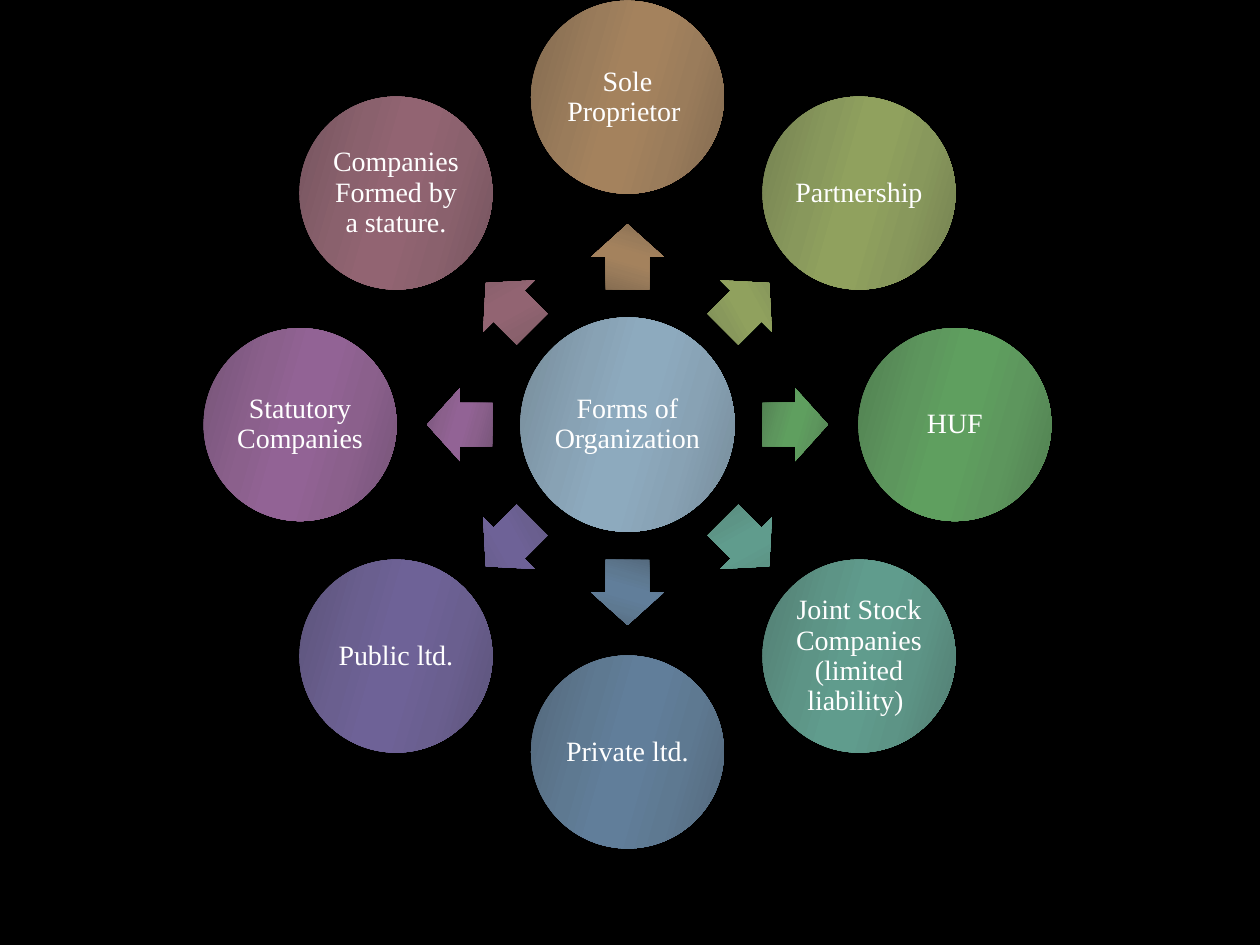
"""Build a radial slide of the forms of organization."""
from dataclasses import dataclass
from math import cos, radians, sin

from lxml.etree import SubElement
from pptx import Presentation
from pptx.dml.color import RGBColor
from pptx.enum.shapes import MSO_SHAPE
from pptx.enum.text import MSO_ANCHOR, PP_ALIGN
from pptx.oxml.ns import qn
from pptx.shapes.autoshape import Shape
from pptx.slide import Slide
from pptx.util import Cm, Pt

CENTER_X, CENTER_Y = 12.65, 8.56
HUB_SIZE, CIRCLE_SIZE = 4.32, 3.89
ARROW_LENGTH, ARROW_WIDTH = 1.32, 1.47
CIRCLE_ORBIT, ARROW_ORBIT = 6.6, 3.38
GRADIENT_ANGLE = 16
INSET = Cm(0.05)
FRAME_FORMAT = {
    "word_wrap": True, "vertical_anchor": MSO_ANCHOR.MIDDLE,
    "margin_left": INSET, "margin_right": INSET,
    "margin_top": INSET, "margin_bottom": INSET,
}
PARA_FORMAT = {"alignment": PP_ALIGN.CENTER, "line_spacing": 0.9}
FONT_FORMAT = {"name": "Times New Roman", "size": Pt(16)}


@dataclass(frozen=True)
class Form:
    """A label with the edge, middle and core colours of its gradient."""
    label: str
    edge: str
    middle: str
    core: str


HUB = Form("Forms of Organization", "768B99", "88A2B4", "8DAABE")
FORMS = [
    Form("Sole Proprietor ", "826A50", "9A7C5B", "A4825D"),
    Form("Partnership", "748051", "88985C", "90A15E"),
    Form("HUF", "517E51", "5D965D", "5F9F5F"),
    Form("Joint Stock Companies (limited liability) ", "527C71", "5D9486", "609C8D"),
    Form("Private ltd.", "53677A", "5E7991", "617E9A"),
    Form("Public ltd.", "5B5379", "6A5F8F", "6E6297"),
    Form("Statutory Companies", "755477", "8B608C", "926395"),
    Form("Companies Formed by a stature.", "75545E", "8A616D", "926472"),
]


def color(value: str) -> RGBColor:
    """Turn a hex string into a colour."""
    return RGBColor.from_string(value)


def apply_format(target: object, values: dict) -> None:
    """Set each named attribute on the target."""
    for name, value in values.items():
        setattr(target, name, value)


def fill_gradient(shape: Shape, form: Form) -> None:
    """Fill a shape with a six-stop gradient that is lightest in the middle."""
    shape.fill.gradient()
    shape.fill.gradient_angle = 360 - GRADIENT_ANGLE
    stops = shape._element.spPr.find(qn("a:gradFill")).find(qn("a:gsLst"))
    stops.clear()
    shades = [form.edge, form.middle, form.core, form.core, form.middle, form.edge]
    for position, shade in zip((0, 30, 45, 55, 73, 100), shades):
        stop = SubElement(stops, qn("a:gs"), pos=str(position * 1000))
        SubElement(stop, qn("a:srgbClr"), val=shade)


def add_centered(page: Slide, kind: MSO_SHAPE, form: Form, x: float, y: float,
                 width: float, height: float) -> Shape:
    """Add a borderless gradient shape centred on a point."""
    shape = page.shapes.add_shape(
        kind, Cm(x - width / 2), Cm(y - height / 2), Cm(width), Cm(height))
    shape.shadow.inherit = False
    shape.line.fill.background()
    fill_gradient(shape, form)
    return shape


def add_circle(page: Slide, form: Form, x: float, y: float, size: float) -> None:
    """Add a labelled circle."""
    circle = add_centered(page, MSO_SHAPE.OVAL, form, x, y, size, size)
    apply_format(circle.text_frame, FRAME_FORMAT)
    para = circle.text_frame.paragraphs[0]
    apply_format(para, PARA_FORMAT)
    span = para.add_run()
    span.text = form.label
    apply_format(span.font, FONT_FORMAT)
    span.font.color.rgb = color("FFFFFF")


def add_arrow(page: Slide, form: Form, x: float, y: float, angle: float) -> None:
    """Add an arrow turned to point away from the hub."""
    arrow = add_centered(
        page, MSO_SHAPE.RIGHT_ARROW, form, x, y, ARROW_LENGTH, ARROW_WIDTH)
    arrow.adjustments[0] = 0.6
    arrow.adjustments[1] = 0.5
    arrow.rotation = angle % 360


def orbit_point(radius: float, angle: float) -> tuple[float, float]:
    """Return the point at an angle and distance from the hub."""
    turn = radians(angle)
    return CENTER_X + radius * cos(turn), CENTER_Y + radius * sin(turn)


def main() -> None:
    """Build and save the deck."""
    deck = Presentation()
    deck.slide_width, deck.slide_height = Cm(25.4), Cm(19.05)
    page = deck.slides.add_slide(deck.slide_layouts[6])
    page.background.fill.solid()
    page.background.fill.fore_color.rgb = color("000000")
    add_circle(page, HUB, CENTER_X, CENTER_Y, HUB_SIZE)
    for index, form in enumerate(FORMS):
        angle = index * 360 / len(FORMS) - 90
        add_arrow(page, form, *orbit_point(ARROW_ORBIT, angle), angle)
        add_circle(page, form, *orbit_point(CIRCLE_ORBIT, angle), CIRCLE_SIZE)
    deck.save("out.pptx")


if __name__ == "__main__":
    main()
